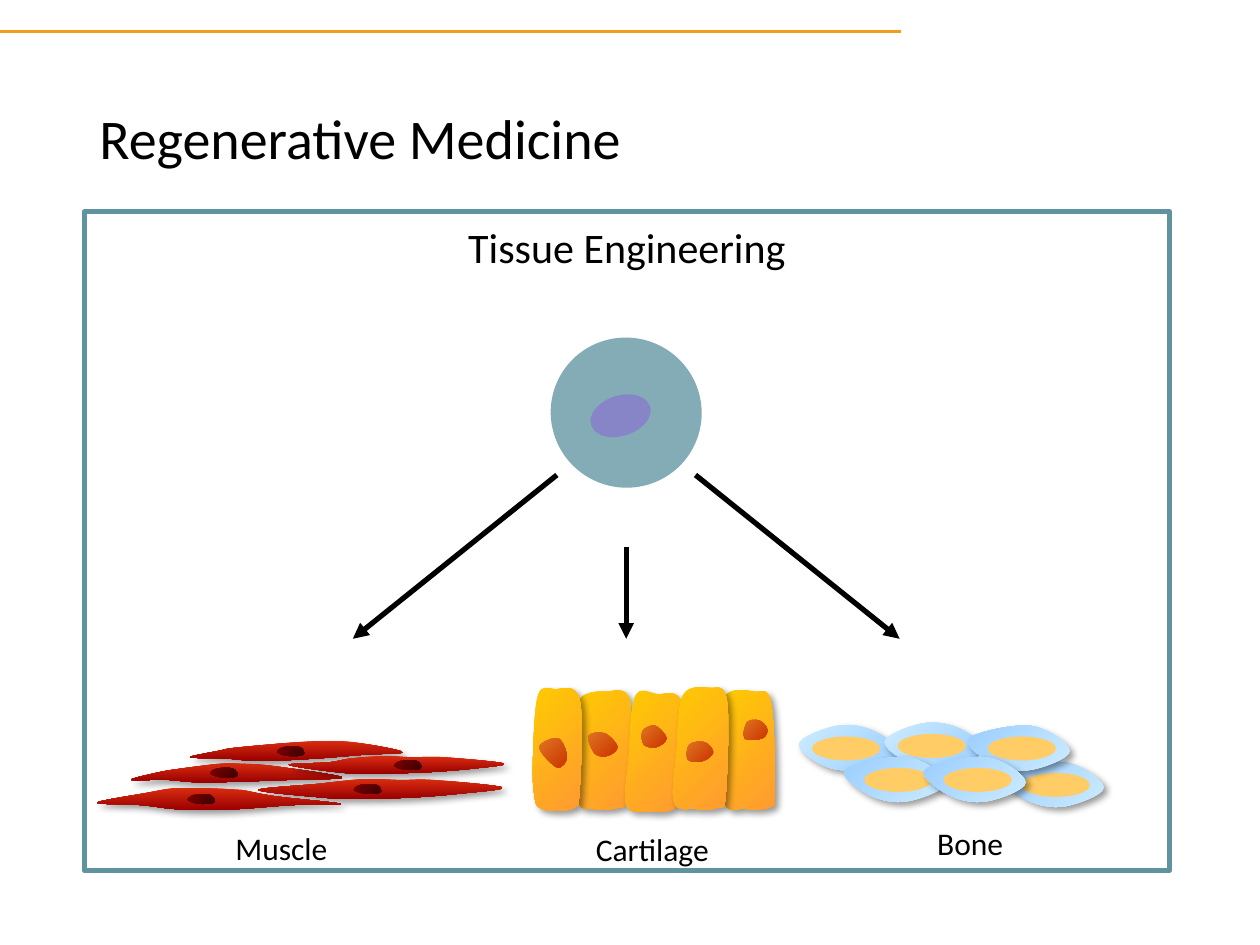
from pptx import Presentation
from pptx.dml.color import RGBColor
from pptx.enum.shapes import MSO_CONNECTOR, MSO_SHAPE
from pptx.enum.text import MSO_ANCHOR, PP_ALIGN
from pptx.oxml import parse_xml
from pptx.oxml.ns import nsdecls
from pptx.util import Inches, Pt

STRAIGHT, OVAL, RECTANGLE = MSO_CONNECTOR.STRAIGHT, MSO_SHAPE.OVAL, MSO_SHAPE.RECTANGLE
LEFT, CENTER = PP_ALIGN.LEFT, PP_ALIGN.CENTER
TOP, MIDDLE = MSO_ANCHOR.TOP, MSO_ANCHOR.MIDDLE

BLACK = RGBColor(0x00, 0x00, 0x00)
ORANGE = RGBColor(0xF1, 0x9D, 0x19)
TEAL = RGBColor(0x5F, 0x93, 0x9F)
STEM_BODY = RGBColor(0x84, 0xAC, 0xB6)
STEM_NUCLEUS = RGBColor(0x87, 0x84, 0xC7)
BONE_NUCLEUS = RGBColor(0xFF, 0xCC, 0x66)
CARTILAGE = RGBColor(0xFF, 0xCC, 0x00), RGBColor(0xFF, 0x99, 0x33)
CARTILAGE_NUCLEUS = RGBColor(0xDE, 0x77, 0x22), RGBColor(0xCC, 0x33, 0x00)
BONE = RGBColor(0xCC, 0xEC, 0xFF), RGBColor(0x99, 0xCC, 0xFF)
MUSCLE = RGBColor(0xDA, 0x2D, 0x10), RGBColor(0x99, 0x00, 0x00)
MUSCLE_NUCLEUS = RGBColor(0x80, 0x00, 0x00), RGBColor(0x3B, 0x00, 0x00)

prs = Presentation()
prs.slide_width, prs.slide_height = Inches(10), Inches(7.5)
slide = prs.slides.add_slide(prs.slide_layouts[6])
shapes = slide.shapes

# The slide is a grid of 1000 columns by 750 rows of square units.
UNIT = prs.slide_width // 1000
SHADOW = (f'<a:effectLst {nsdecls("a")}><a:outerShdw blurRad="50800" dist="38100" '
          'dir="2700000" algn="tl" rotWithShape="0"><a:srgbClr val="000000">'
          '<a:alpha val="40000"/></a:srgbClr></a:outerShdw></a:effectLst>')


def add_cell(knots, colors, angle=315, shadow=True, origin=(0, 0)):
    """Draw a smooth closed curve through the knots, filled with a gradient."""
    knots = [[UNIT * (o + v) for o, v in zip(origin, knot)] for knot in knots]
    builder = shapes.build_freeform(*knots[0])
    for i, p1 in enumerate(knots):
        p0, p2, p3 = (knots[(i + k) % len(knots)] for k in (-1, 1, 2))
        leave = [b + (c - a) / 6 for a, b, c in zip(p0, p1, p2)]
        arrive = [c - (d - b) / 6 for b, c, d in zip(p1, p2, p3)]
        builder.add_line_segments([leave, arrive, p2], close=False)
    cell = builder.convert_to_shape()

    # Every three straight segments become one Bézier segment.
    segments = cell._element.xpath(".//a:lnTo")
    for i in range(0, len(segments), 3):
        bezier = parse_xml(f'<a:cubicBezTo {nsdecls("a")}/>')
        segments[i].addprevious(bezier)
        for segment in segments[i:i + 3]:
            bezier.append(segment[0])
            segment.getparent().remove(segment)
    bezier.addnext(parse_xml(f'<a:close {nsdecls("a")}/>'))

    cell.fill.gradient()
    cell.fill.gradient_angle = angle
    for stop, color in zip(cell.fill.gradient_stops, colors):
        stop.color.rgb = color
    cell.line.fill.background()
    if shadow:
        cell._element.spPr.append(parse_xml(SHADOW))
    else:
        cell.shadow.inherit = False
    return cell


def add_oval(left, top, width, height, color, rotation=0):
    oval = shapes.add_shape(OVAL, *(round(UNIT * v) for v in (left, top, width, height)))
    oval.shadow.inherit = False
    oval.fill.solid()
    oval.fill.fore_color.rgb = color
    oval.line.fill.background()
    oval.rotation = rotation


frame = shapes.add_shape(RECTANGLE, *(UNIT * v for v in (67, 168, 861, 523)))
frame.shadow.inherit = False
frame.fill.background()
frame.line.color.rgb = TEAL
frame.line.width = Pt(3)

# Cartilage: columnar cells, then their nuclei
for outline in (
    [(500, 557), (480, 549), (460, 555), (455, 583), (459, 635), (470, 642), (491, 641), (497, 631)],
    [(541, 559), (521, 551), (504, 553), (499, 602), (497, 639), (513, 644), (532, 643), (537, 632)],
    [(612, 558), (599, 549), (576, 552), (573, 587), (575, 637), (591, 642), (610, 641), (615, 630)],
    [(577, 556), (563, 546), (542, 552), (537, 597), (535, 637), (552, 642), (570, 641), (576, 631)],
    [(460, 555), (440, 547), (427, 552), (423, 601), (424, 631), (430, 642), (454, 642), (460, 628)],
):
    add_cell(outline, CARTILAGE)
for outline in (
    [(443, 586), (450, 601), (442, 609), (428, 593)],
    [(480, 582), (490, 593), (482, 600), (472, 598), (467, 584)],
    [(520, 576), (529, 586), (521, 593), (511, 591), (510, 580)],
    [(559, 589), (566, 597), (558, 604), (546, 603), (547, 591)],
    [(603, 572), (609, 579), (605, 586), (591, 586), (593, 573)],
):
    add_cell(outline, CARTILAGE_NUCLEUS, shadow=False)

# Bone: one outline, some cells turned half round
BONE_OUTLINE = [(61, 7), (31, 2), (0, 17), (31, 37), (80, 27)]
for left, top, turned in ((791, 603, True), (634, 574, False), (702, 572, False),
                          (666, 599, True), (764, 574, True), (729, 599, True)):
    bone_cell = add_cell(BONE_OUTLINE, BONE, origin=(left, top))
    bone_cell.rotation = 180 if turned else 0
    add_oval(left + (20 if turned else 10.5), top + 10.5, 54, 19, BONE_NUCLEUS)

# Muscle: each fibre with the place of its nucleus
NUCLEUS_OUTLINE = [(19, 2), (6, 2), (1, 6), (10, 9), (22, 8)]
for nucleus_at, outline in (
    ((219, 591), [(151, 601), (173, 596), (191, 593), (254, 588), (287, 590), (320, 597),
                  (289, 599), (251, 602), (207, 604), (179, 602)]),
    ((166, 608), [(104, 619), (126, 613), (144, 610), (176, 606), (189, 606), (217, 608),
                  (272, 617), (231, 619), (203, 620), (159, 621), (132, 619)]),
    ((312, 602), [(229, 607), (261, 605), (278, 602), (305, 600), (327, 601), (352, 601),
                  (400, 606), (376, 610), (338, 613), (295, 614), (268, 613)]),
    ((280, 621), [(205, 627), (253, 622), (279, 619), (295, 618), (318, 619), (344, 619),
                  (399, 625), (364, 630), (326, 633), (283, 634), (256, 633)]),
    ((148, 629), [(77, 637), (118, 629), (134, 626), (148, 625), (177, 626), (192, 627),
                  (219, 632), (271, 638), (232, 639), (192, 642), (162, 643), (137, 642),
                  (112, 639)]),
):
    add_cell(outline, MUSCLE, angle=270)
    add_cell(NUCLEUS_OUTLINE, MUSCLE_NUCLEUS, shadow=False, origin=nucleus_at)

# Header rule and the three arrows, mirrored about the stem cell's axis
AXIS = 497
for start, end, color, weight, arrow in (
    ((0, 25), (715, 25), ORANGE, 1.5, False),
    ((AXIS - 55, 377), (AXIS - 217, 507), BLACK, 3, True),
    ((AXIS, 434), (AXIS, 507), BLACK, 3, True),
    ((AXIS + 55, 377), (AXIS + 217, 507), BLACK, 3, True),
):
    connector = shapes.add_connector(STRAIGHT, *(UNIT * v for v in start + end))
    connector.line.color.rgb = color
    connector.line.width = Pt(weight)
    if arrow:
        connector.line._get_or_add_ln().append(
            parse_xml(f'<a:tailEnd {nsdecls("a")} type="triangle"/>'))
    connector._element.spPr.append(parse_xml(f'<a:effectLst {nsdecls("a")}/>'))

# Stem cell
add_oval(AXIS - 60, 268, 120, 119, STEM_BODY, 25)
add_oval(468, 314, 49, 32, STEM_NUCLEUS, 342.2)

for text, box, size, align, anchor, wrap, spacing in (
    ("Regenerative Medicine", (69, 40, 862, 145), 32, LEFT, MIDDLE, True, 0.9),
    ("Tissue Engineering", (67, 171, 861, 50), 24, CENTER, TOP, True, 1.0),
    ("Muscle", (177, 653, 94, 40), 18, LEFT, TOP, False, 1.0),
    ("Cartilage", (463, 654, 111, 40), 18, LEFT, TOP, False, 1.0),
    ("Bone", (734, 649, 73, 40), 18, LEFT, TOP, False, 1.0),
):
    text_frame = shapes.add_textbox(*(UNIT * v for v in box)).text_frame
    text_frame.word_wrap = wrap
    text_frame.vertical_anchor = anchor
    paragraph = text_frame.paragraphs[0]
    paragraph.text = text
    paragraph.alignment = align
    paragraph.line_spacing = spacing
    paragraph.font.name = "Calibri"
    paragraph.font.size = Pt(size)
    paragraph.font.color.rgb = BLACK

prs.save("out.pptx")
